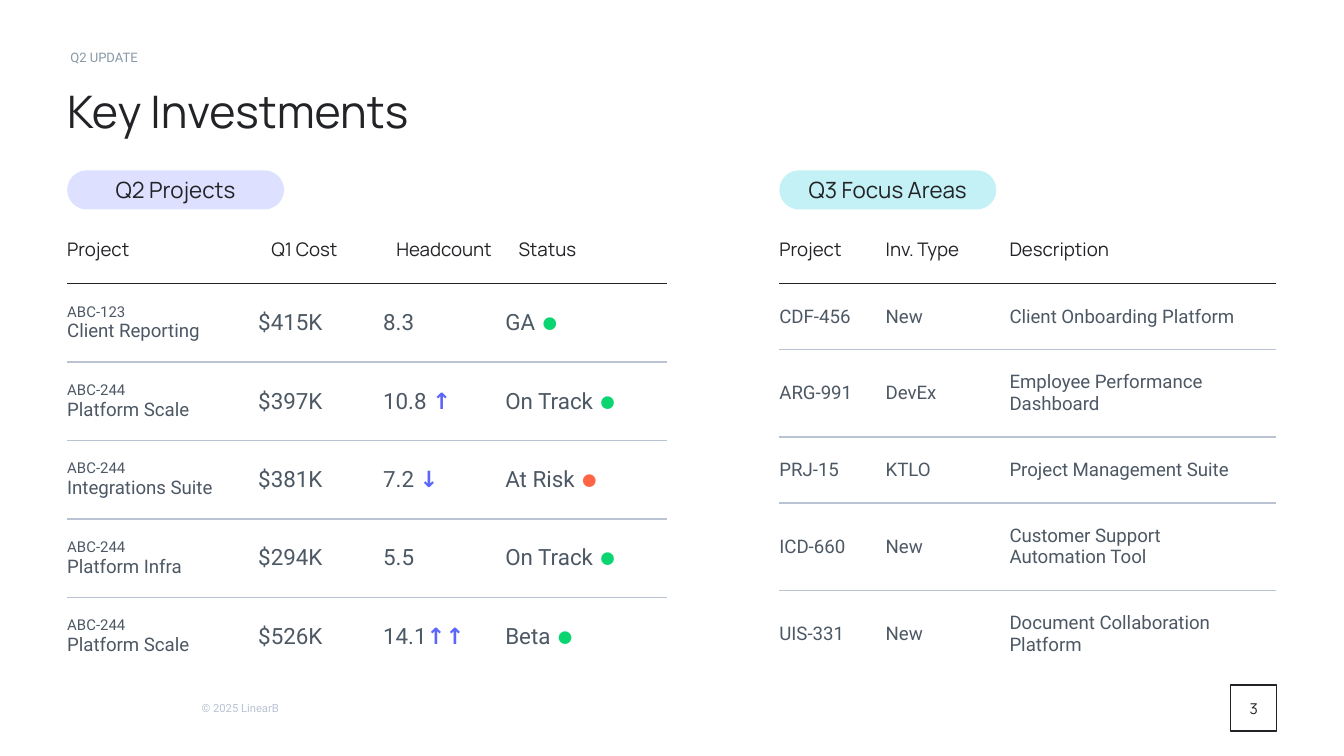
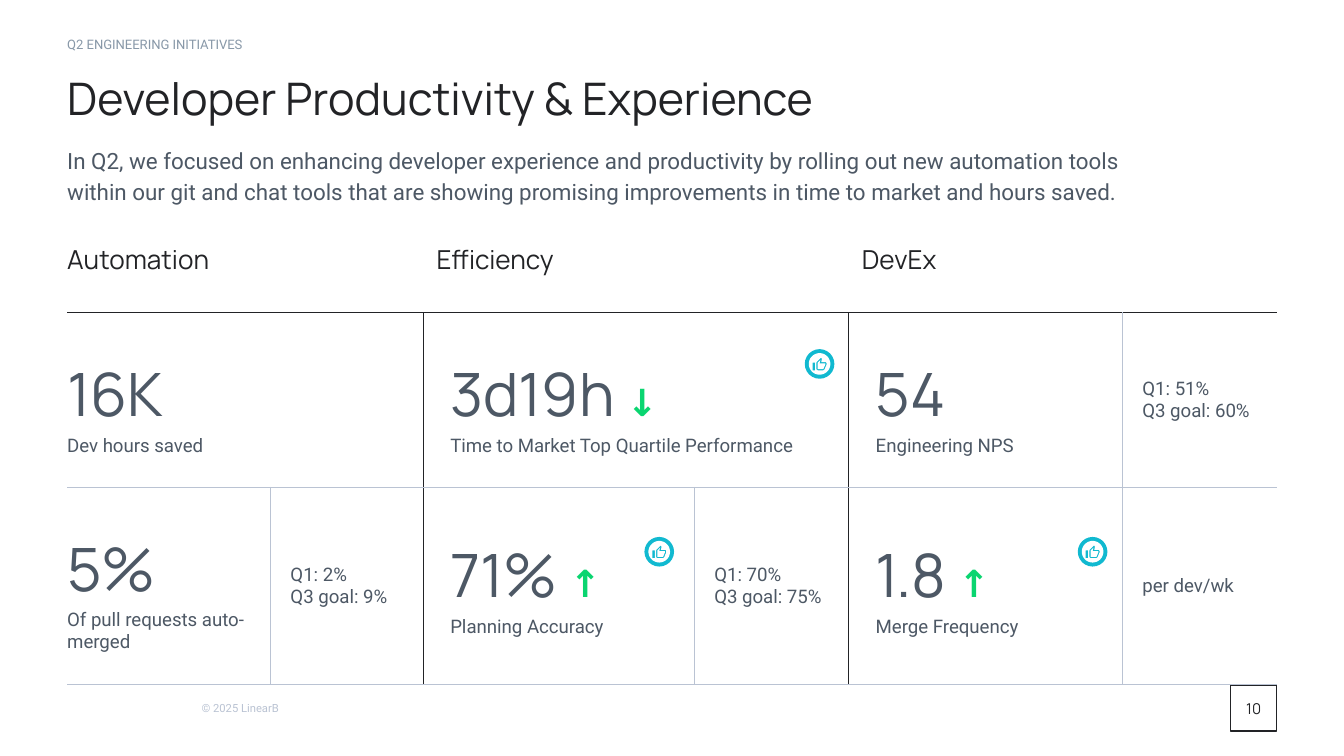
from collections import namedtuple
from copy import deepcopy
from math import cos, pi, sin

from lxml.etree import SubElement
from pptx import Presentation
from pptx.dml.color import RGBColor
from pptx.enum.shapes import MSO_SHAPE
from pptx.enum.text import MSO_ANCHOR, MSO_AUTO_SIZE, PP_ALIGN
from pptx.oxml.ns import qn
from pptx.util import Cm, Pt

INK, SLATE, MUTED, RULE, WHITE = "222326", "4D5865", "8898A8", "BAC3D3", "FFFFFF"
GREEN, ORANGE, VIOLET, TEAL = "0AD570", "FF6445", "5B66FB", "11B9D0"
LILAC, AQUA = "DDE1FF", "C3F1F5"
HEADING_FONT, TEXT_FONT = "Manrope", "Roboto"
NO_TABLE_STYLE = "{2D5ABB26-0587-4C30-8999-92F81FD0307C}"
LEFT, TABLE_TOP, HEADER_ROW = 1.27, 4.47, 0.89

Style = namedtuple("Style", "size font colour bold", defaults=(False,))
KICKER = Style(7, TEXT_FONT, MUTED)
TITLE = Style(24, HEADING_FONT, INK)
LEAD = Style(12, TEXT_FONT, SLATE)
SMALL = Style(8, TEXT_FONT, SLATE)
BODY = Style(10, TEXT_FONT, SLATE)
COLUMN_HEAD = Style(10, HEADING_FONT, INK)
PILL = Style(12, HEADING_FONT, INK)
PAGE_NUMBER = Style(8, HEADING_FONT, INK)
COPYRIGHT = Style(6, TEXT_FONT, RULE)
GROUP_HEAD = Style(14, HEADING_FONT, INK)
METRIC = Style(32, HEADING_FONT, SLATE)
TREND = Style(12, TEXT_FONT, VIOLET, True)
GAIN = Style(20, TEXT_FONT, GREEN, True)

PROJECTS = [
    ("ABC-123", "Client Reporting", "$415K", "8.3", "", "GA", GREEN),
    ("ABC-244", "Platform Scale", "$397K", "10.8 ", "↑", "On Track", GREEN),
    ("ABC-244", "Integrations Suite", "$381K", "7.2 ", "↓", "At Risk", ORANGE),
    ("ABC-244", "Platform Infra", "$294K", "5.5", "", "On Track", GREEN),
    ("ABC-244", "Platform Scale", "$526K", "14.1", "↑↑", "Beta", GREEN),
]
FOCUS_AREAS = [
    ("CDF-456", "New", "Client Onboarding Platform"),
    ("ARG-991", "DevEx", "Employee Performance Dashboard"),
    ("PRJ-15", "KTLO", "Project Management Suite"),
    ("ICD-660", "New", "Customer Support \nAutomation Tool"),
    ("UIS-331", "New", "Document Collaboration Platform"),
]
THUMB_OUTLINES = [
    [(90, 210), (180, 210), (198, 198), (230, 120), (230, 100), (222, 83), (210, 80),
     (147, 80), (156, 34), (152, 20), (142, 10), (76, 76), (70, 90), (70, 190), (76, 204)],
    [(90, 90), (133, 47), (120, 100), (210, 100), (210, 120), (180, 190), (90, 190)],
    [(10, 90), (50, 90), (50, 210), (10, 210)],
]


def rgb(colour):
    """Turn a hex string into a colour."""
    return RGBColor.from_string(colour)


def box_lengths(box):
    """Turn left, top, width and height in centimetres into lengths."""
    return [Cm(value) for value in box]


def write_spans(para, spans):
    """Write styled spans into a paragraph; a newline becomes a line break."""
    for text, style in spans:
        for index, piece in enumerate(text.split("\n")):
            if index:
                para.add_line_break()
                para._p[-1].append(deepcopy(span._r.rPr))
            if not piece:
                continue
            span = para.add_run()
            span.text = piece
            span.font.size = Pt(style.size)
            span.font.name = style.font
            span.font.bold = style.bold
            span.font.color.rgb = rgb(style.colour)


def write_paras(frame, paras, align=PP_ALIGN.LEFT, spacing=None):
    """Write a list of span lists as the paragraphs of a text frame."""
    for index, spans in enumerate(paras):
        para = frame.add_paragraph() if index else frame.paragraphs[0]
        para.alignment = align
        if spacing:
            para.line_spacing = spacing
        write_spans(para, spans)


def set_insets(target, left=0.25, top=0.25, right=0.25, bottom=0.25):
    """Set the four inner margins of a text frame or a cell."""
    target.margin_left, target.margin_top = Cm(left), Cm(top)
    target.margin_right, target.margin_bottom = Cm(right), Cm(bottom)


def paint(shape, fill, line=None):
    """Give a shape a flat fill and an optional outline."""
    shape.shadow.inherit = False
    shape.fill.solid()
    shape.fill.fore_color.rgb = rgb(fill)
    if line:
        shape.line.color.rgb = rgb(line)
        shape.line.width = Pt(0.75)
    else:
        shape.line.fill.background()


def add_label(page, preset, box, text, style, fill, line=None):
    """Add a filled shape with centred text."""
    shape = page.shapes.add_shape(preset, *box_lengths(box))
    if preset == MSO_SHAPE.ROUNDED_RECTANGLE:
        shape.adjustments[0] = 0.5
    paint(shape, fill, line)
    frame = shape.text_frame
    frame.word_wrap = True
    frame.vertical_anchor = MSO_ANCHOR.MIDDLE
    set_insets(frame)
    write_paras(frame, [[(text, style)]], PP_ALIGN.CENTER)


def add_footer(page, number):
    """Add the copyright line and the boxed page number."""
    note = page.shapes.add_textbox(*box_lengths((3.56, 12.47, 5.87, 1.8)))
    frame = note.text_frame
    frame.word_wrap = True
    frame.vertical_anchor = MSO_ANCHOR.MIDDLE
    set_insets(frame)
    write_paras(frame, [[("© 2025 LinearB", COPYRIGHT)]], spacing=1.15)
    add_label(page, MSO_SHAPE.RECTANGLE, (23.26, 12.95, 0.87, 0.87), number, PAGE_NUMBER, WHITE, INK)


def add_heading(page, box, kicker, title, lead=None):
    """Fill the title placeholder with kicker, title and optional lead."""
    holder = page.shapes.title
    holder.left, holder.top, holder.width, holder.height = box_lengths(box)
    frame = holder.text_frame
    frame.auto_size = MSO_AUTO_SIZE.NONE
    frame.word_wrap = True
    frame.vertical_anchor = MSO_ANCHOR.TOP
    set_insets(frame, 0, 0, 0, 0)
    paras = [[(kicker, KICKER)], [(title, TITLE)]]
    if lead:
        paras.append([(lead, LEAD)])
    write_paras(frame, paras)
    for para in frame.paragraphs[1:]:
        para.space_before = Pt(10)
    if lead:
        frame.paragraphs[2].line_spacing = 1.15


def start_page(deck, number, heading_box, *heading):
    """Add a page with its heading and footer."""
    page = deck.slides.add_slide(deck.slide_layouts[5])
    add_heading(page, heading_box, *heading)
    add_footer(page, number)
    return page


def add_plain_table(page, left, widths, heights):
    """Add an unstyled table with the given column widths and row heights."""
    box = box_lengths((left, TABLE_TOP, sum(widths), sum(heights)))
    table = page.shapes.add_table(len(heights), len(widths), *box).table
    table.first_row = table.horz_banding = False
    table._tbl.tblPr.find(qn("a:tableStyleId")).text = NO_TABLE_STYLE
    for column, width in zip(table.columns, widths):
        column.width = Cm(width)
    for row, height in zip(table.rows, heights):
        row.height = Cm(height)
    return table


def fill_cell(cell, paras, insets, borders, anchor=MSO_ANCHOR.MIDDLE, spacing=None):
    """Write a cell and draw its borders, given as side to colour."""
    set_insets(cell, *insets)
    cell.vertical_anchor = anchor
    write_paras(cell.text_frame, paras, spacing=spacing)
    properties = cell._tc.get_or_add_tcPr()
    for side in "LRTB":
        colour = borders.get(side)
        line = SubElement(properties, qn(f"a:ln{side}"), w=str(Pt(0.75) if colour else 0))
        if colour:
            SubElement(SubElement(line, qn("a:solidFill")), qn("a:srgbClr"), val=colour)
        else:
            SubElement(line, qn("a:noFill"))
    cell.fill.background()


def add_list_table(page, left, widths, heights, heads, rows, padding, head_indent):
    """Add a ruled table with a header row above rows of span lists."""
    table = add_plain_table(page, left, widths, [HEADER_ROW] + heights)
    grid = [[[(head, COLUMN_HEAD)] for head in heads]] + rows
    for r, row in enumerate(grid):
        borders = {}
        if r:
            borders["T"] = INK if r == 1 else RULE
        if r < len(rows):
            borders["B"] = RULE if r else INK
        for c, spans in enumerate(row):
            right = 0 if c == len(row) - 1 else 0.25
            if r:
                fill_cell(table.cell(r, c), [spans], (0, padding, right, padding), borders)
            else:
                insets = (head_indent if c else 0, 0, right, 0)
                fill_cell(table.cell(r, c), [spans], insets, borders, MSO_ANCHOR.TOP)


def project_spans(code, name, cost, heads, trend, status, light):
    """Return the four cells of one project row."""
    return [
        [(f"{code} \n", SMALL), (name, BODY)],
        [(cost, LEAD)],
        [(heads, LEAD), (trend, TREND)],
        [(f"{status} ", LEAD), ("⏺", LEAD._replace(colour=light))],
    ]


def add_thumb_badge(page, left, top, size=0.56):
    """Add a round thumbs-up badge."""
    group = page.shapes.add_group_shape()
    ring = group.shapes.add_shape(MSO_SHAPE.OVAL, *box_lengths((left, top, size, size)))
    paint(ring, TEAL)
    disc = [(120 + 170 * cos(step * pi / 24), 110 + 170 * sin(step * pi / 24)) for step in range(48)]
    unit = Cm(0.012) / 10
    builder = group.shapes.build_freeform(*map(round, disc[0]), scale=unit)
    builder.add_line_segments(disc[1:])
    for outline in THUMB_OUTLINES:
        builder.move_to(*outline[0])
        builder.add_line_segments(outline[1:])
    origin_x = round(Cm(left + size / 2) - 120 * unit)
    origin_y = round(Cm(top + size / 2) - 110 * unit)
    paint(builder.convert_to_shape(origin_x, origin_y), WHITE)


def metric_spans(value, arrow, label):
    """Return a large value, an optional arrow and the label below."""
    if arrow:
        return [[(f"{value} ", METRIC), (f"{arrow}\n", GAIN), (label, BODY)]]
    return [[(value, METRIC), (" \n", BODY), (label, BODY)]]


def add_scorecard(page):
    """Add the grid of metrics under three group headings."""
    table = add_plain_table(page, LEFT, [3.84, 2.89, 5.12, 2.92, 5.17, 2.93], [1.07] * 3)
    rows = [
        [(c, 2, [[(head, GROUP_HEAD)]]) for c, head in zip((0, 2, 4), ("Automation", "Efficiency", "DevEx"))],
        [
            (0, 2, metric_spans("16K", "", "Dev hours saved")),
            (2, 2, metric_spans("3d19h", "↓", "Time to Market Top Quartile Performance")),
            (4, 1, metric_spans("54", "", "Engineering NPS")),
            (5, 1, [[("Q1: 51%", BODY)], [("Q3 goal: 60%", BODY)]]),
        ],
        [
            (0, 1, metric_spans("5%", "", "Of pull requests auto-merged")),
            (1, 1, [[("Q1: 2%", BODY)], [("Q3 goal: 9%", BODY)]]),
            (2, 1, metric_spans("71%", "↑", "Planning Accuracy")),
            (3, 1, [[("Q1: 70%", BODY)], [("Q3 goal: 75%", BODY)]]),
            (4, 1, metric_spans("1.8", "↑", "Merge Frequency")),
            (5, 1, [[("per dev/wk", BODY)]]),
        ],
    ]
    for r, row in enumerate(rows):
        for c, span, paras in row:
            cell = table.cell(r, c)
            if span > 1:
                cell.merge(table.cell(r, c + span - 1))
            if r == 0:
                insets = (0.25 if c else 0, 0, 0.25, 0.76)
                fill_cell(cell, paras, insets, {"B": INK}, MSO_ANCHOR.TOP, 1.15)
                continue
            borders = {"T": INK if r == 1 else RULE, "B": RULE}
            for side, edge in (("L", c), ("R", c + span)):
                if 0 < edge < 6:
                    borders[side] = RULE if edge % 2 else INK
            indent = 0.38 if c % 2 else 0.51 if c else 0
            fill_cell(cell, paras, (indent, 0.76, 0.25, 0.76), borders)


def build_investments(deck):
    """Build the page with project and focus area tables."""
    page = start_page(deck, "3", (LEFT, 0.94, 9.37, 1.7), " Q2 UPDATE", "Key Investments")
    add_list_table(page, LEFT, [3.61, 2.36, 2.31, 3.05], [1.37] * 5,
                   ["Project", "Q1 Cost", "Headcount", "Status"],
                   [project_spans(*project) for project in PROJECTS], 0.36, 0.25)
    add_list_table(page, 14.73, [2.01, 2.34, 5.03], [1.25, 1.4, 1.25, 1.4, 1.4],
                   ["Project", "Inv. Type", "Description"],
                   [[[(text, BODY)] for text in area] for area in FOCUS_AREAS], 0.4, 0)
    for left, text, fill in ((LEFT, "Q2 Projects", LILAC), (14.73, "Q3 Focus Areas", AQUA)):
        add_label(page, MSO_SHAPE.ROUNDED_RECTANGLE, (left, 3.22, 4.1, 0.74), text, PILL, fill)


def build_productivity(deck):
    """Build the page with the productivity scorecard."""
    page = start_page(
        deck, "10", (LEFT, 0.69, 20.93, 3.78),
        "Q2 ENGINEERING INITIATIVES", "Developer Productivity & Experience",
        "In Q2, we focused on enhancing developer experience and productivity by rolling out new "
        "automation tools within our git and chat tools that are showing promising improvements in "
        "time to market and hours saved.")
    add_scorecard(page)
    for left, top in ((20.37, 10.15), (15.21, 6.6), (12.18, 10.15)):
        add_thumb_badge(page, left, top)


def main():
    """Build and save the deck."""
    deck = Presentation()
    deck.slide_width, deck.slide_height = Cm(25.4), Cm(14.29)
    build_investments(deck)
    build_productivity(deck)
    deck.save("out.pptx")


if __name__ == "__main__":
    main()
